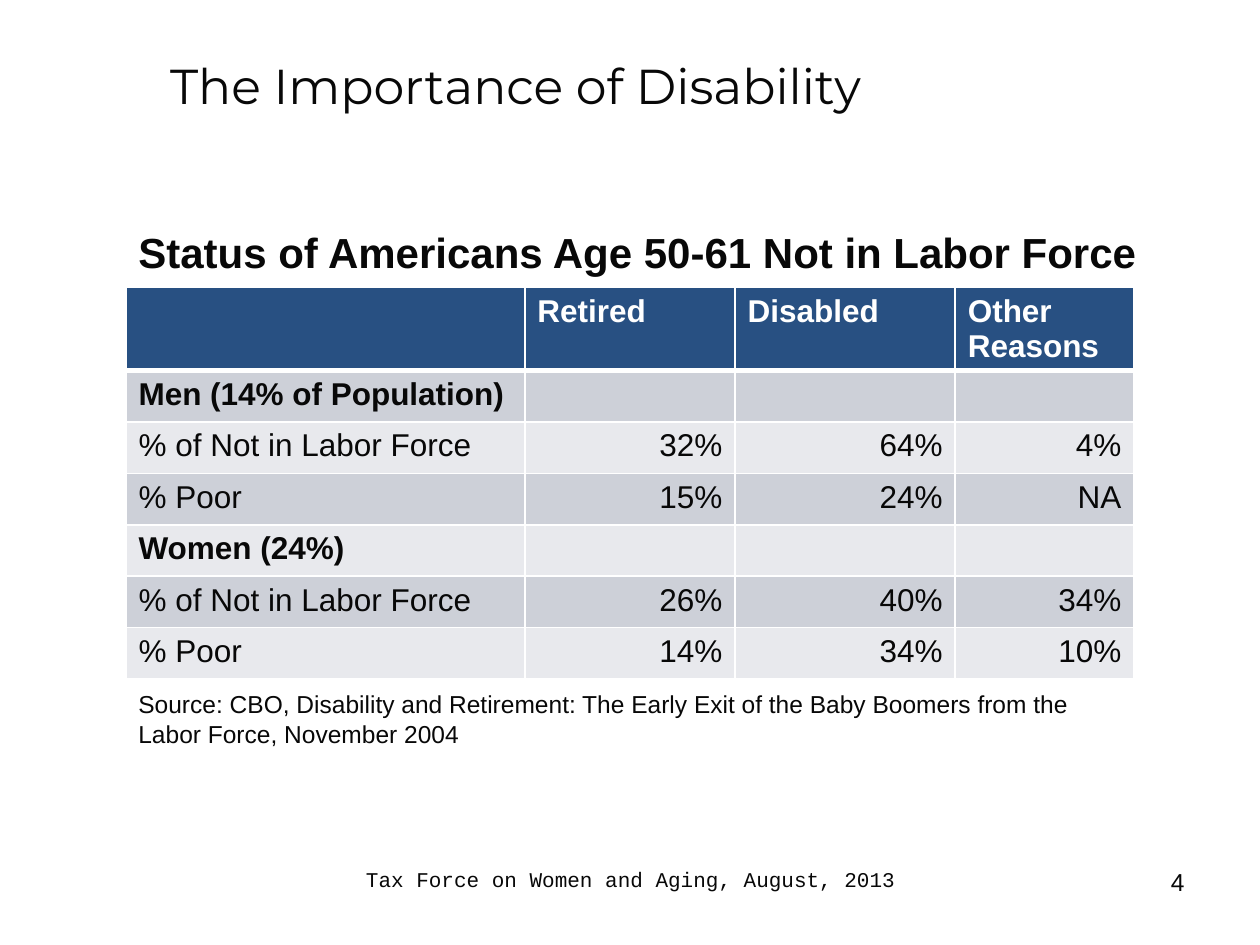
from lxml.etree import SubElement
from pptx import Presentation
from pptx.dml.color import RGBColor
from pptx.enum.text import MSO_ANCHOR, PP_ALIGN
from pptx.oxml.ns import qn
from pptx.util import Inches, Pt

COLORS = {
    "text": "080808",
    "white": "FFFFFF",
    "header": "285082",
    "dark_band": "CDD0D8",
    "light_band": "E8E9ED",
}
HEADINGS = ["", "Retired", "Disabled", "Other Reasons"]
STATUS_ROWS = [
    ["Men (14% of Population)", "", "", ""],
    ["% of Not in Labor Force", "32%", "64%", "4%"],
    ["% Poor", "15%", "24%", "NA"],
    ["Women (24%)", "", "", ""],
    ["% of Not in Labor Force", "26%", "40%", "34%"],
    ["% Poor", "14%", "34%", "10%"],
]
COLUMN_SHARES = [3.17, 1.67, 1.75, 1.42]
HEADER_HEIGHT = 0.65


def write_text(frame, text, size=18, font="Arial", color="text", bold=False,
               align=PP_ALIGN.LEFT):
    paragraph = frame.paragraphs[0]
    paragraph.alignment = align
    run = paragraph.add_run()
    run.text = text
    run.font.size = Pt(size)
    run.font.name = font
    run.font.bold = bold
    run.font.color.rgb = RGBColor.from_string(COLORS[color])


def add_title(slide, box, text):
    title = slide.shapes.title
    title.left, title.top, title.width, title.height = map(Inches, box)
    title.text_frame.vertical_anchor = MSO_ANCHOR.MIDDLE
    write_text(title.text_frame, text, size=28, font="Montserrat")


def add_label(slide, box, text, wrap=True, **text_format):
    label = slide.shapes.add_textbox(*map(Inches, box))
    label.text_frame.word_wrap = wrap
    write_text(label.text_frame, text, **text_format)


def style_cell(cell, fill, border_widths):
    properties = cell._tc.get_or_add_tcPr()
    for side, width in border_widths.items():
        line = SubElement(properties, qn(f"a:ln{side}"), w=str(Pt(width)))
        line_fill = SubElement(line, qn("a:solidFill"))
        SubElement(line_fill, qn("a:srgbClr"), val=COLORS["white"])
    cell.fill.solid()
    cell.fill.fore_color.rgb = RGBColor.from_string(COLORS[fill])


def add_status_table(slide, box):
    rows = [HEADINGS] + STATUS_ROWS
    left, top, width, height = box
    table = slide.shapes.add_table(
        len(rows), len(HEADINGS), *map(Inches, box)).table
    for column, share in zip(table.columns, COLUMN_SHARES):
        column.width = Inches(width * share / sum(COLUMN_SHARES))
    body_height = (height - HEADER_HEIGHT) / len(STATUS_ROWS)

    for row_index, values in enumerate(rows):
        is_header = row_index == 0
        is_group = not any(values[1:])
        table.rows[row_index].height = Inches(
            HEADER_HEIGHT if is_header else body_height)
        band = "dark_band" if row_index % 2 else "light_band"
        borders = {"L": 1, "R": 1, "T": 3 if row_index == 1 else 1,
                   "B": 3 if is_header else 1}
        for column_index, value in enumerate(values):
            cell = table.cell(row_index, column_index)
            style_cell(cell, "header" if is_header else band, borders)
            if value:
                is_number = column_index > 0 and not is_header
                write_text(cell.text_frame, value,
                           color="white" if is_header else "text",
                           bold=is_header or is_group,
                           align=PP_ALIGN.RIGHT if is_number else PP_ALIGN.LEFT)


def add_footer(slide, box):
    left, top, width, height = box
    add_label(slide, (left, top, 4.67, height),
              "Tax Force on Women and Aging, August, 2013",
              size=12, font="Courier New", align=PP_ALIGN.CENTER)
    number_width = 2.33
    add_label(slide, (left + width - number_width, top, number_width, height),
              "4", size=14, align=PP_ALIGN.RIGHT)


def main():
    presentation = Presentation()
    presentation.slide_width = Inches(10)
    presentation.slide_height = Inches(7.5)
    slide = presentation.slides.add_slide(presentation.slide_layouts[5])
    add_title(slide, (1.25, 0.17, 8.25, 1), "The Importance of Disability")
    add_status_table(slide, (1, 2.28, 8, 3.1))
    add_footer(slide, (2.67, 6.83, 6.83, 0.52))
    add_label(slide, (1, 5.42, 8, 0.57),
              "Source: CBO, Disability and Retirement: The Early Exit of the "
              "Baby Boomers from the Labor Force, November 2004", size=14)
    add_label(slide, (1, 1.75, 8.2, 0.81),
              "Status of Americans Age 50-61 Not in Labor Force",
              wrap=False, size=24, bold=True)
    presentation.save("out.pptx")


if __name__ == "__main__":
    main()
